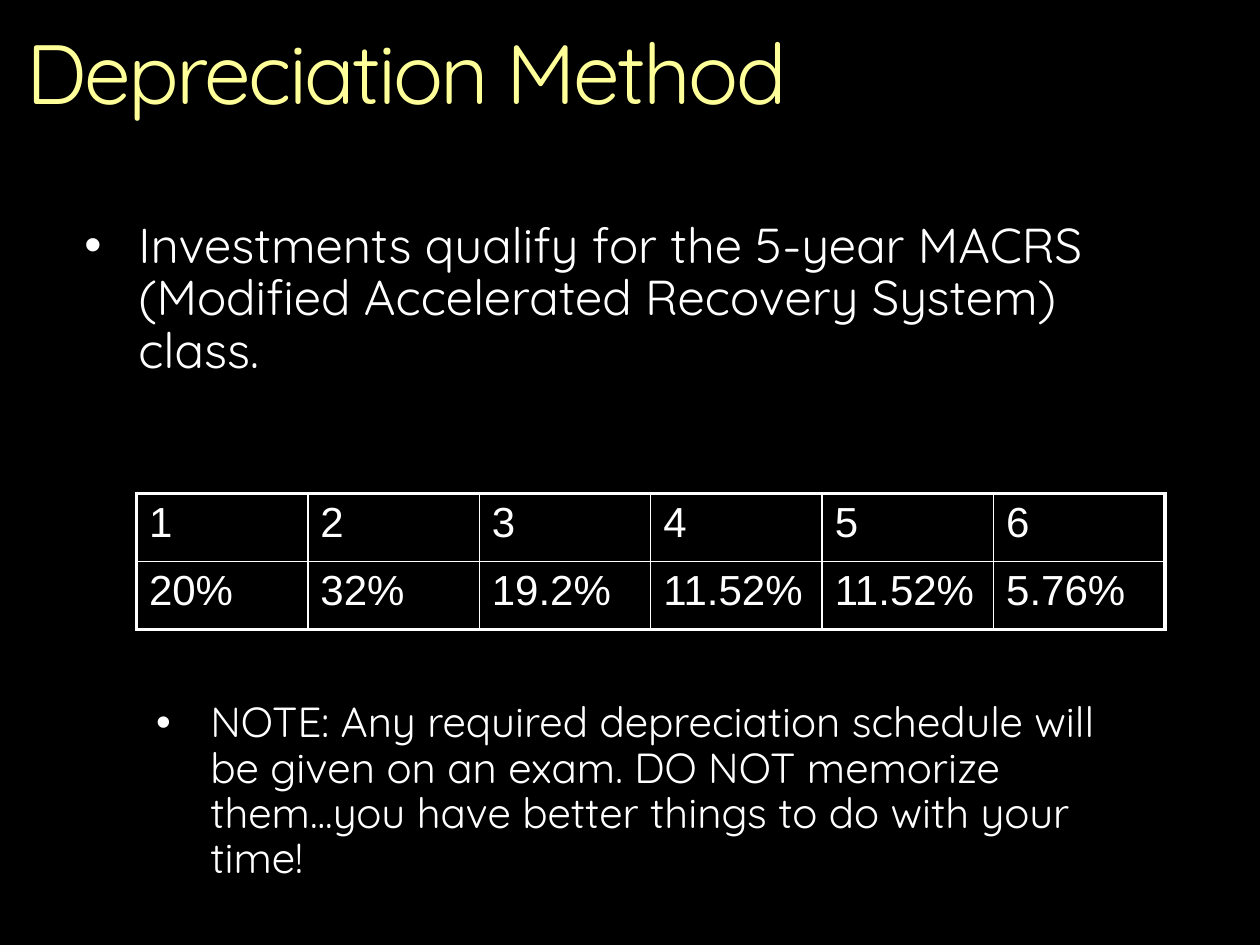
"""Build the depreciation method slide with its MACRS schedule."""
from lxml.etree import SubElement
from pptx import Presentation
from pptx.dml.color import RGBColor
from pptx.oxml.ns import qn
from pptx.util import Cm, Pt

WHITE = "FFFFFF"


def color(value):
    return RGBColor.from_string(value)


def write(paragraph, text, font_name, size, tint, **layout):
    for attribute, value in layout.items():
        setattr(paragraph, attribute, value)
    run = paragraph.add_run()
    run.text = text
    for attribute, value in {"name": font_name, "size": Pt(size)}.items():
        setattr(run.font, attribute, value)
    run.font.color.rgb = color(tint)
    return run


deck = Presentation()
deck.slide_width, deck.slide_height = Cm(25.4), Cm(19.05)
slide = deck.slides.add_slide(deck.slide_layouts[6])
slide.background.fill.solid()
slide.background.fill.fore_color.rgb = color("000000")

frame_format = {"word_wrap": True, "margin_left": 0, "margin_top": 0,
                "margin_right": 0, "margin_bottom": 0}
heading = slide.shapes.add_textbox(Cm(0.53), Cm(0.64), Cm(22.28), Cm(2.54)).text_frame
body = slide.shapes.add_textbox(Cm(1.7), Cm(4.45), Cm(21.16), Cm(13.72)).text_frame
for frame in (heading, body):
    for attribute, value in frame_format.items():
        setattr(frame, attribute, value)

title = write(heading.paragraphs[0], "Depreciation Method", "Quicksand", 48, "FFFF99",
              line_spacing=0.9)
title.font._element.set("spc", "-150")

points = [
    ("Investments qualify for the 5-year MACRS (Modified Accelerated Recovery System) class.",
     28, 0, 1.09, 0),
    ("NOTE: Any required depreciation schedule will be given on an exam. DO NOT memorize "
     "them...you have better things to do with your time!", 24, 1, 2.54, 184),
]
for index, (text, size, level, indent, gap) in enumerate(points):
    point = body.add_paragraph() if index else body.paragraphs[0]
    properties = point._p.get_or_add_pPr()
    properties.set("marL", str(Cm(indent)))
    properties.set("indent", str(-Cm(1.09)))
    SubElement(properties, qn("a:buFont"), typeface="Arial")
    SubElement(properties, qn("a:buChar"), char="•")
    write(point, text, "Quicksand", size, WHITE,
          level=level, line_spacing=0.9, space_before=Pt(gap))

rates = ["20%", "32%", "19.2%", "11.52%", "11.52%", "5.76%"]
rows = [[str(year) for year in range(1, len(rates) + 1)], rates]
schedule = slide.shapes.add_table(2, len(rates), Cm(2.75), Cm(9.95), Cm(20.74), Cm(2.74)).table
schedule.first_row = schedule.horz_banding = False
for row, values in enumerate(rows):
    for column, value in enumerate(values):
        cell = schedule.cell(row, column)
        write(cell.text_frame.paragraphs[0], value, "Arial", 24, WHITE)
        outer_edges = {"lnL": column == 0, "lnR": column == len(rates) - 1,
                       "lnT": row == 0, "lnB": row == len(rows) - 1}
        borders = cell._tc.get_or_add_tcPr()
        for edge, is_outer in outer_edges.items():
            line = SubElement(borders, qn(f"a:{edge}"), w=str(Pt(2.25 if is_outer else 1)))
            SubElement(SubElement(line, qn("a:solidFill")), qn("a:srgbClr"), val=WHITE)
        cell.fill.background()

deck.save("out.pptx")
